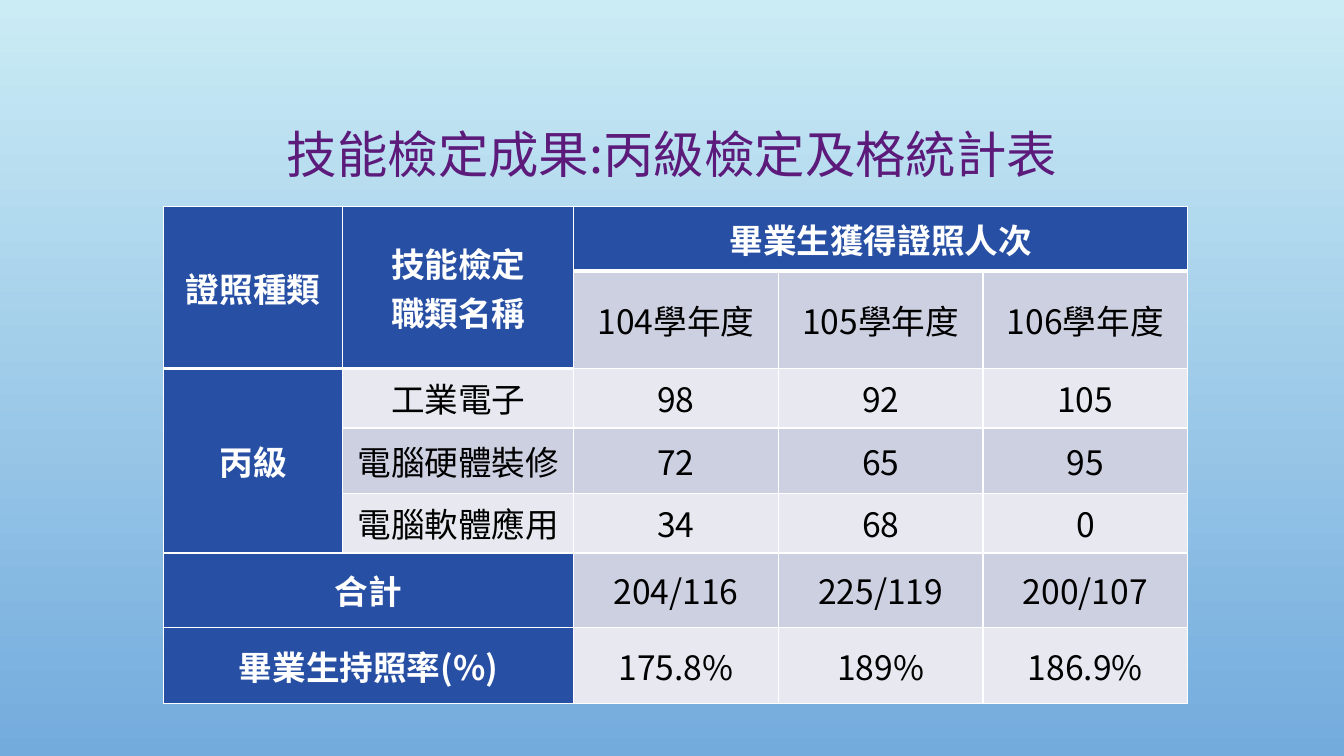
import pptx
import pptx.util
import pptx.dml.color
import pptx.enum.text
import pptx.oxml
import pptx.oxml.ns
from pptx.util import Inches

RGBColor = pptx.dml.color.RGBColor
SKY_TOP = RGBColor(0xCB, 0xEC, 0xF5)
SKY_BOTTOM = RGBColor(0x73, 0xAB, 0xDD)
PURPLE = RGBColor(0x5C, 0x1B, 0x7B)
NAVY = RGBColor(0x27, 0x4F, 0xA4)
BAND_DARK = RGBColor(0xCD, 0xD0, 0xE0)
BAND_LIGHT = RGBColor(0xE8, 0xE9, 0xF0)
WHITE = RGBColor(0xFF, 0xFF, 0xFF)
BLACK = RGBColor(0x00, 0x00, 0x00)
FONT = "Noto Sans CJK SC"

COLUMN_WIDTHS = [1.78, 2.29, 2.03, 2.03, 2.03]
ROW_HEIGHTS = [0.64, 0.68, 0.59, 0.65, 0.59, 0.74, 0.75]
ROWS = [
    ["證照種類", "技能檢定\n職類名稱", "畢業生獲得證照人次", "", ""],
    ["", "", "104學年度", "105學年度", "106學年度"],
    ["丙級", "工業電子", "98", "92", "105"],
    ["", "電腦硬體裝修", "72", "65", "95"],
    ["", "電腦軟體應用", "34", "68", "0"],
    ["合計", "", "204/116", "225/119", "200/107"],
    ["畢業生持照率(%)", "", "175.8%", "189%", "186.9%"],
]
MERGES = [
    ((0, 0), (1, 0)), ((0, 1), (1, 1)), ((0, 2), (0, 4)),
    ((2, 0), (4, 0)), ((5, 0), (5, 1)), ((6, 0), (6, 1)),
]


def add_text(para, text, size, color, bold=False):
    """Add one centred, formatted run to a paragraph."""
    para.alignment = pptx.enum.text.PP_ALIGN.CENTER
    span = para.add_run()
    span.text = text
    span.font.size = pptx.util.Pt(size)
    span.font.bold = bold
    span.font.color.rgb = color
    span.font.name = FONT
    east_asian = pptx.oxml.parse_xml(
        f'<a:ea {pptx.oxml.ns.nsdecls("a")} typeface="{FONT}"/>')
    span.font._element.find(pptx.oxml.ns.qn("a:latin")).addnext(east_asian)


def paint_background(page):
    """Fill the page with a vertical sky gradient."""
    fill = page.background.fill
    fill.gradient()
    fill.gradient_angle = 270
    for stop, color in zip(fill.gradient_stops, (SKY_TOP, SKY_BOTTOM)):
        stop.color.rgb = color


def add_title(page, text):
    """Place and format the title placeholder."""
    title = page.shapes.title
    title.left, title.top = Inches(1), Inches(0.68)
    title.width, title.height = Inches(11.33), Inches(1.75)
    title.text_frame.vertical_anchor = pptx.enum.text.MSO_ANCHOR.MIDDLE
    para = title.text_frame.paragraphs[0]
    para.line_spacing = 0.9
    add_text(para, text, 36, PURPLE)


def has_thick_bottom(row, column):
    """Tell whether a header cell ends in a thick rule."""
    return row == 0 or (row == 1 and column < 2)


def set_borders(cell, row, column):
    """Draw the white rules around a cell."""
    widths = {
        "L": 1,
        "R": 1,
        "T": 3 if row > 0 and has_thick_bottom(row - 1, column) else 1,
        "B": 3 if has_thick_bottom(row, column) else 1,
    }
    properties = cell._tc.get_or_add_tcPr()
    for side, points in widths.items():
        properties.append(pptx.oxml.parse_xml(
            f'<a:ln{side} {pptx.oxml.ns.nsdecls("a")} w="{pptx.util.Pt(points)}">'
            f'<a:solidFill><a:srgbClr val="{WHITE}"/></a:solidFill></a:ln{side}>'))


def format_cell(cell, text, row, column):
    """Give a cell its rules, fill, margins and text."""
    heading = row == 0 or column == 0 or (column == 1 and row in (1, 5, 6))
    set_borders(cell, row, column)
    cell.fill.solid()
    band = BAND_DARK if row % 2 else BAND_LIGHT
    cell.fill.fore_color.rgb = NAVY if heading else band
    cell.margin_left = cell.margin_right = Inches(0.07)
    cell.margin_top = cell.margin_bottom = 0
    cell.vertical_anchor = pptx.enum.text.MSO_ANCHOR.MIDDLE
    frame = cell.text_frame
    for index, line in enumerate(text.split("\n") if text else []):
        para = frame.add_paragraph() if index else frame.paragraphs[0]
        add_text(para, line, 24, WHITE if heading else BLACK, heading)


def add_results_table(page):
    """Build the certification results table."""
    table = page.shapes.add_table(
        len(ROWS), len(COLUMN_WIDTHS), Inches(1.62), Inches(2.05),
        Inches(sum(COLUMN_WIDTHS)), Inches(sum(ROW_HEIGHTS))).table
    table.first_row = table.horz_banding = False
    for column, width in zip(table.columns, COLUMN_WIDTHS):
        column.width = Inches(width)
    for row, height in zip(table.rows, ROW_HEIGHTS):
        row.height = Inches(height)
    for first, last in MERGES:
        table.cell(*first).merge(table.cell(*last))
    for row, texts in enumerate(ROWS):
        for column, text in enumerate(texts):
            format_cell(table.cell(row, column), text, row, column)


def main():
    """Build and save the deck."""
    deck = pptx.Presentation()
    deck.slide_width, deck.slide_height = Inches(13.33), Inches(7.5)
    page = deck.slides.add_slide(deck.slide_layouts.get_by_name("Title Only"))
    paint_background(page)
    add_title(page, "技能檢定成果:丙級檢定及格統計表")
    add_results_table(page)
    deck.save("out.pptx")


if __name__ == "__main__":
    main()
